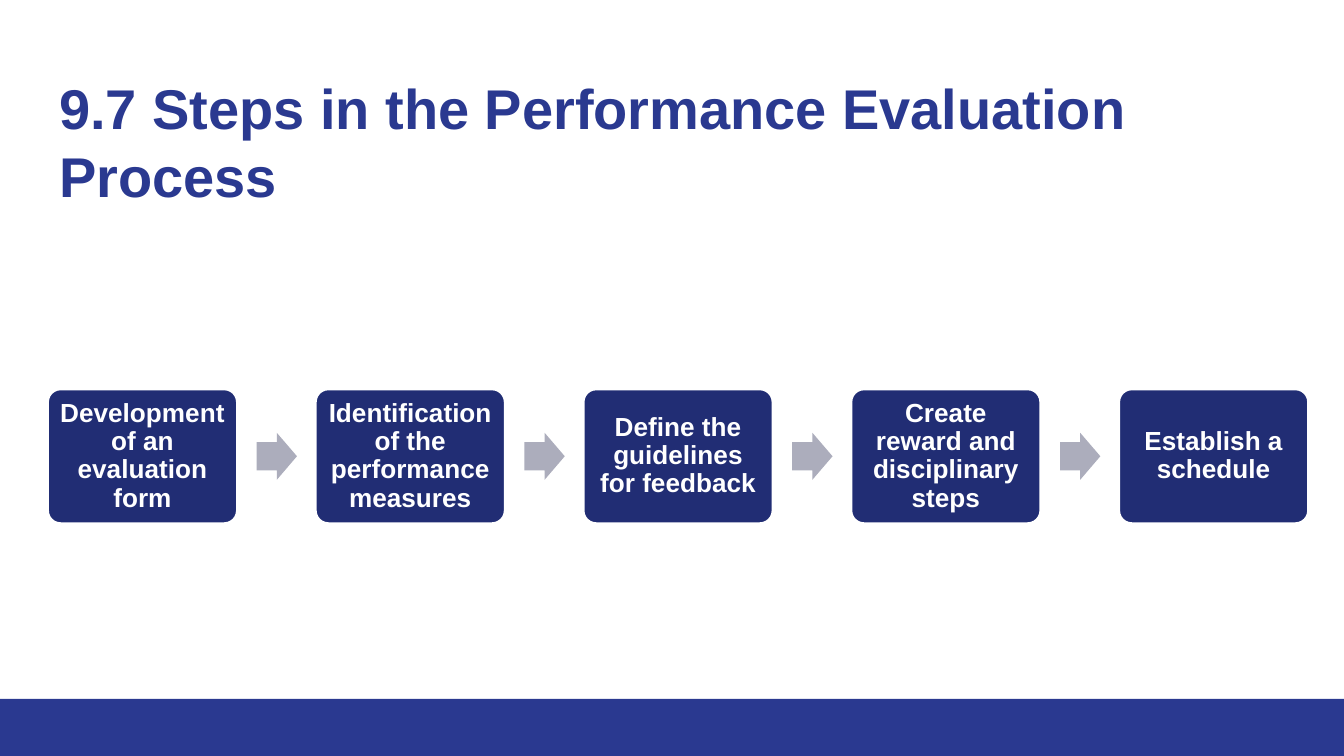
from dataclasses import dataclass

from pptx import Presentation, util as u
from pptx.dml.color import RGBColor
from pptx.enum import shapes, text


@dataclass(frozen=True)
class Theme:
    font: str = "Arial"
    title_size: int = 30
    step_size: int = 14
    blue: str = "2A3990"
    navy: str = "212D74"
    grey: str = "ACADBC"
    white: str = "FFFFFF"


SLIDE_W = 10
SLIDE_H = SLIDE_W * 9 / 16
BAND_TOP = 5.2
STEP_LEFT, STEP_TOP, STEP_W, STEP_H = 0.35, 2.89, 1.42, 1.01
PITCH = (8.32 - STEP_LEFT) / 4
ARROW_OFFSET, ARROW_W, ARROW_H = 1.56, 0.3, 0.35

STEPS = [
    "Development of an evaluation form",
    "Identification of the performance measures",
    "Define the guidelines for feedback",
    "Create reward and disciplinary steps",
    "Establish a schedule",
]


def write(tf, content, *, font, size, color, align, anchor, spacing=1.0,
          inset=0.1):
    """Fill a text frame with one bold, formatted paragraph."""
    tf.word_wrap = True
    tf.auto_size = text.MSO_AUTO_SIZE.NONE
    tf.vertical_anchor = anchor
    tf.margin_left = tf.margin_right = u.Inches(inset)
    tf.margin_top = tf.margin_bottom = u.Inches(inset)
    p = tf.paragraphs[0]
    p.alignment = align
    p.line_spacing = spacing
    r = p.add_run()
    r.text = content
    r.font.name = font
    r.font.size = u.Pt(size)
    r.font.bold = True
    r.font.color.rgb = RGBColor.from_string(color)


class SlideBuilder:
    def __init__(self, prs, theme):
        self.theme = theme
        self.s = prs.slides.add_slide(prs.slide_layouts[5])

    def title(self, content, x, y, w, h):
        sp = self.s.shapes.title
        sp.left, sp.top, sp.width, sp.height = map(u.Inches, (x, y, w, h))
        write(sp.text_frame, content, font=self.theme.font,
              size=self.theme.title_size, color=self.theme.blue,
              align=text.PP_ALIGN.LEFT, anchor=text.MSO_ANCHOR.TOP)

    def shape(self, kind, x, y, w, h, fill, adjustments=()):
        sp = self.s.shapes.add_shape(kind, *map(u.Inches, (x, y, w, h)))
        sp.shadow.inherit = False
        sp.fill.solid()
        sp.fill.fore_color.rgb = RGBColor.from_string(fill)
        sp.line.fill.background()
        for i, value in enumerate(adjustments):
            sp.adjustments[i] = value
        return sp

    def band(self):
        self.shape(shapes.MSO_SHAPE.RECTANGLE, 0, BAND_TOP, SLIDE_W,
                   SLIDE_H - BAND_TOP, self.theme.blue)

    def step(self, column, label):
        sp = self.shape(shapes.MSO_SHAPE.ROUNDED_RECTANGLE,
                        STEP_LEFT + column * PITCH, STEP_TOP, STEP_W, STEP_H,
                        self.theme.navy, [0.1])
        sp.line.color.rgb = RGBColor.from_string(self.theme.white)
        sp.line.width = u.Pt(2)
        write(sp.text_frame, label, font=self.theme.font,
              size=self.theme.step_size, color=self.theme.white,
              align=text.PP_ALIGN.CENTER, anchor=text.MSO_ANCHOR.MIDDLE,
              spacing=0.9, inset=0.05)

    def arrow(self, column):
        """Place the arrow that follows the step in this column."""
        self.shape(shapes.MSO_SHAPE.RIGHT_ARROW,
                   STEP_LEFT + column * PITCH + ARROW_OFFSET,
                   STEP_TOP + (STEP_H - ARROW_H) / 2, ARROW_W, ARROW_H,
                   self.theme.grey, [0.6, 0.5])


def main():
    prs = Presentation()
    prs.slide_width, prs.slide_height = u.Inches(SLIDE_W), u.Inches(SLIDE_H)
    slide = SlideBuilder(prs, Theme())
    slide.band()
    slide.title("9.7 Steps in the Performance Evaluation Process",
                0.34, 0.45, 9.32, 0.66)
    for column, label in enumerate(STEPS):
        slide.step(column, label)
        if column < len(STEPS) - 1:
            slide.arrow(column)
    prs.save("out.pptx")


if __name__ == "__main__":
    main()
